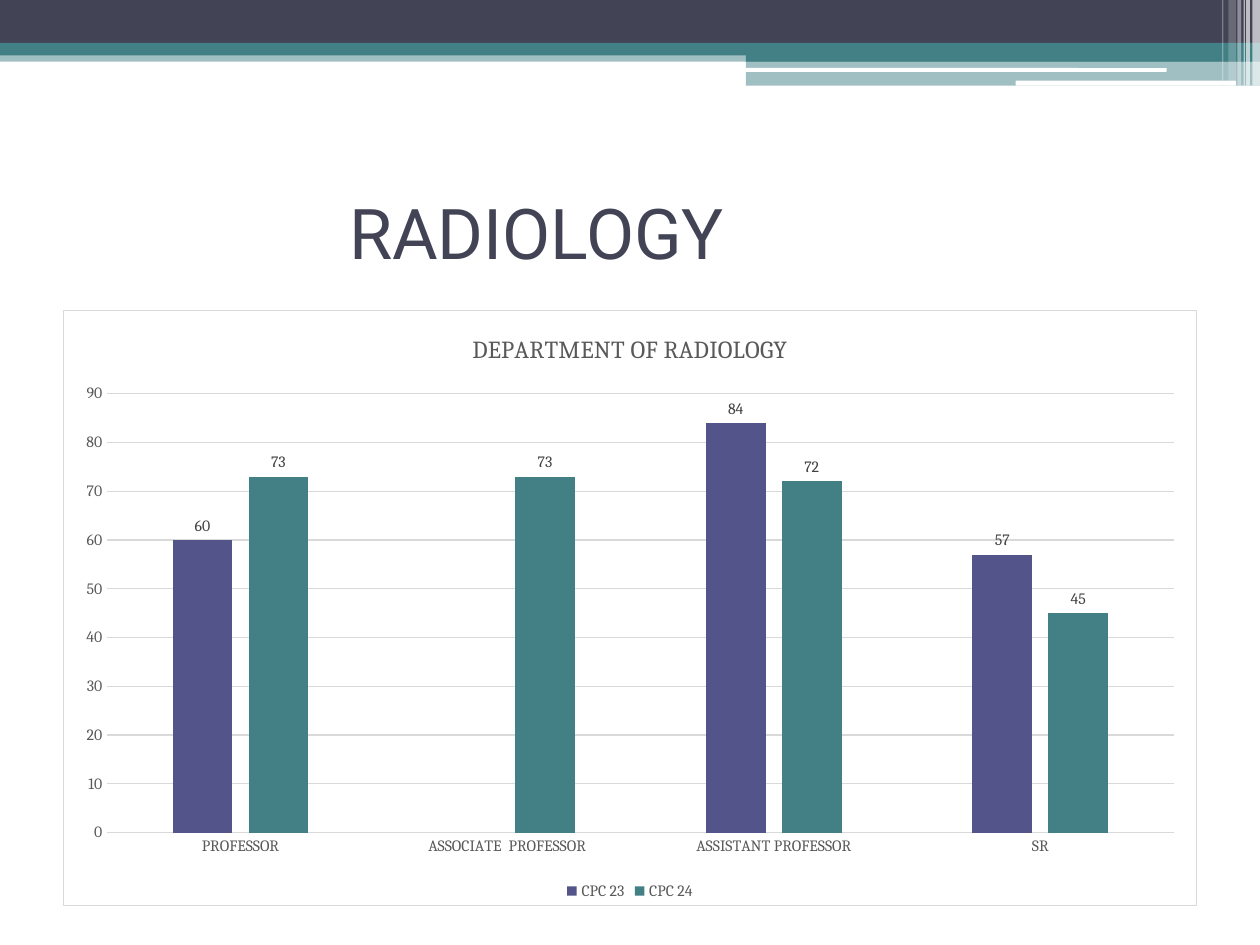
from dataclasses import dataclass

from lxml import etree
from pptx import Presentation
from pptx.chart.data import CategoryChartData
from pptx.dml.color import RGBColor
from pptx.enum.chart import XL_CHART_TYPE, XL_LABEL_POSITION, XL_LEGEND_POSITION, XL_TICK_MARK
from pptx.enum.shapes import MSO_SHAPE
from pptx.enum.text import MSO_ANCHOR, PP_ALIGN
from pptx.oxml import parse_xml
from pptx.oxml.ns import nsdecls, qn
from pptx.util import Inches, Pt

COLUMNS = XL_CHART_TYPE.COLUMN_CLUSTERED
OUTSIDE_END = XL_LABEL_POSITION.OUTSIDE_END
BOTTOM = XL_LEGEND_POSITION.BOTTOM
NO_TICK = XL_TICK_MARK.NONE
RECT = MSO_SHAPE.RECTANGLE
ROUND = MSO_SHAPE.ROUNDED_RECTANGLE
MIDDLE = MSO_ANCHOR.MIDDLE
LEFT = PP_ALIGN.LEFT


@dataclass(frozen=True)
class Theme:
    dark: str = "424456"
    teal: str = "438086"
    violet: str = "53548A"
    white: str = "FFFFFF"
    black: str = "000000"
    grid: str = "D9D9D9"
    muted: str = "595959"
    label: str = "404040"
    title_font: str = "Roboto"
    chart_font: str = "Cambria"
    title_size: float = 40
    chart_title_size: float = 14
    chart_size: float = 10
    small_size: float = 9
    line_width: float = 0.75


class SlideBuilder:
    def __init__(self, slide, theme):
        self.s = slide
        self.theme = theme

    def style_font(self, font, name, size, color):
        font.name = name
        font.size = Pt(size)
        font.bold = False
        font.color.rgb = RGBColor.from_string(color)

    def style_line(self, line):
        line.width = Pt(self.theme.line_width)
        line.color.rgb = RGBColor.from_string(self.theme.grid)

    def bar(self, box, color, alpha=100, shape=RECT):
        sp = self.s.shapes.add_shape(shape, *map(Inches, box))
        sp.shadow.inherit = False
        sp.fill.solid()
        sp.fill.fore_color.rgb = RGBColor.from_string(color)
        sp.line.fill.background()
        if alpha < 100:
            clr = sp.fill._xPr.find(".//" + qn("a:srgbClr"))
            etree.SubElement(clr, qn("a:alpha")).set("val", str(alpha * 1000))

    def title(self, text, box, indent):
        sp = self.s.shapes.title
        sp.left, sp.top, sp.width, sp.height = map(Inches, box)
        tf = sp.text_frame
        tf.text = text
        tf.word_wrap = True
        tf.vertical_anchor = MIDDLE
        tf.margin_left = Inches(indent)
        p = tf.paragraphs[0]
        p.alignment = LEFT
        t = self.theme
        self.style_font(p.runs[0].font, t.title_font, t.title_size, t.dark)

    def chart_frame(self, chart):
        t = self.theme
        frame = parse_xml(
            f'<c:spPr {nsdecls("c", "a")}>'
            f'<a:solidFill><a:srgbClr val="{t.white}"/></a:solidFill>'
            f'<a:ln w="{Pt(t.line_width)}"><a:solidFill><a:srgbClr val="{t.grid}"/>'
            "</a:solidFill></a:ln></c:spPr>"
        )
        chart._chartSpace.find(qn("c:chart")).addnext(frame)

    def column_chart(self, box, heading, categories, series, colors):
        t = self.theme
        data = CategoryChartData()
        data.categories = categories
        for name, values in series.items():
            data.add_series(name, values)
        chart = self.s.shapes.add_chart(COLUMNS, *map(Inches, box), data).chart
        self.style_font(chart.font, t.chart_font, t.chart_size, t.black)
        self.chart_frame(chart)

        chart.has_title = True
        tf = chart.chart_title.text_frame
        tf.text = heading
        self.style_font(tf.paragraphs[0].runs[0].font, t.chart_font, t.chart_title_size, t.muted)
        chart.chart_title.include_in_layout = False

        chart.has_legend = True
        chart.legend.position = BOTTOM
        chart.legend.include_in_layout = False
        self.style_font(chart.legend.font, t.chart_font, t.small_size, t.muted)

        for axis in (chart.category_axis, chart.value_axis):
            axis.major_tick_mark = axis.minor_tick_mark = NO_TICK
            self.style_font(axis.tick_labels.font, t.chart_font, t.small_size, t.muted)
        self.style_line(chart.category_axis.format.line)
        value_axis = chart.value_axis
        value_axis.format.line.fill.background()
        self.style_line(value_axis.major_gridlines.format.line)
        value_axis.minimum_scale = 0
        value_axis.maximum_scale = 90
        value_axis.major_unit = 10

        plot = chart.plots[0]
        plot.vary_by_categories = False
        plot.gap_width = 219
        plot.overlap = -27
        for ser, color in zip(plot.series, colors):
            ser.format.fill.solid()
            ser.format.fill.fore_color.rgb = RGBColor.from_string(color)
            labels = ser.data_labels
            labels.show_value = True
            labels.position = OUTSIDE_END
            self.style_font(labels.font, t.chart_font, t.small_size, t.label)


def main():
    theme = Theme()
    prs = Presentation()
    prs.slide_width, prs.slide_height = Inches(10), Inches(7.5)
    builder = SlideBuilder(prs.slides.add_slide(prs.slide_layouts[5]), theme)

    bands = [
        ((0, 0.4, 10, 0.09), theme.teal, 50),
        ((0, 0, 10, 0.34), theme.dark, 100),
        ((0, 0.34, 10, 0.1), theme.teal, 100),
        ((5.92, 0.39, 4.08, 0.1), theme.teal, 100),
        ((5.92, 0.48, 4.08, 0.2), theme.teal, 50),
    ]
    for box, color, alpha in bands:
        builder.bar(box, color, alpha)
    for box in [(5.91, 0.54, 3.35, 0.03), (8.06, 0.64, 1.75, 0.04)]:
        builder.bar(box, theme.white, shape=ROUND)
    stripes = [
        (9.94, 0.06, 0.68, 65),
        (9.89, 0.03, 0.68, 65),
        (9.87, 0.01, 0.68, 60),
        (9.82, 0.03, 0.68, 40),
        (9.75, 0.06, 0.64, 20),
        (9.7, 0.01, 0.64, 30),
    ]
    for left, width, height, alpha in stripes:
        builder.bar((left, 0, width, height), theme.white, alpha)

    builder.title("RADIOLOGY", (0.5, 1.25, 9, 1.17), indent=2.27)
    builder.column_chart(
        (0.5, 2.46, 9, 4.73),
        "DEPARTMENT OF RADIOLOGY",
        ["PROFESSOR", "ASSOCIATE  PROFESSOR", "ASSISTANT PROFESSOR", "SR"],
        {"CPC 23": (60, None, 84, 57), "CPC 24": (73, 73, 72, 45)},
        (theme.violet, theme.teal),
    )
    prs.save("out.pptx")


if __name__ == "__main__":
    main()
